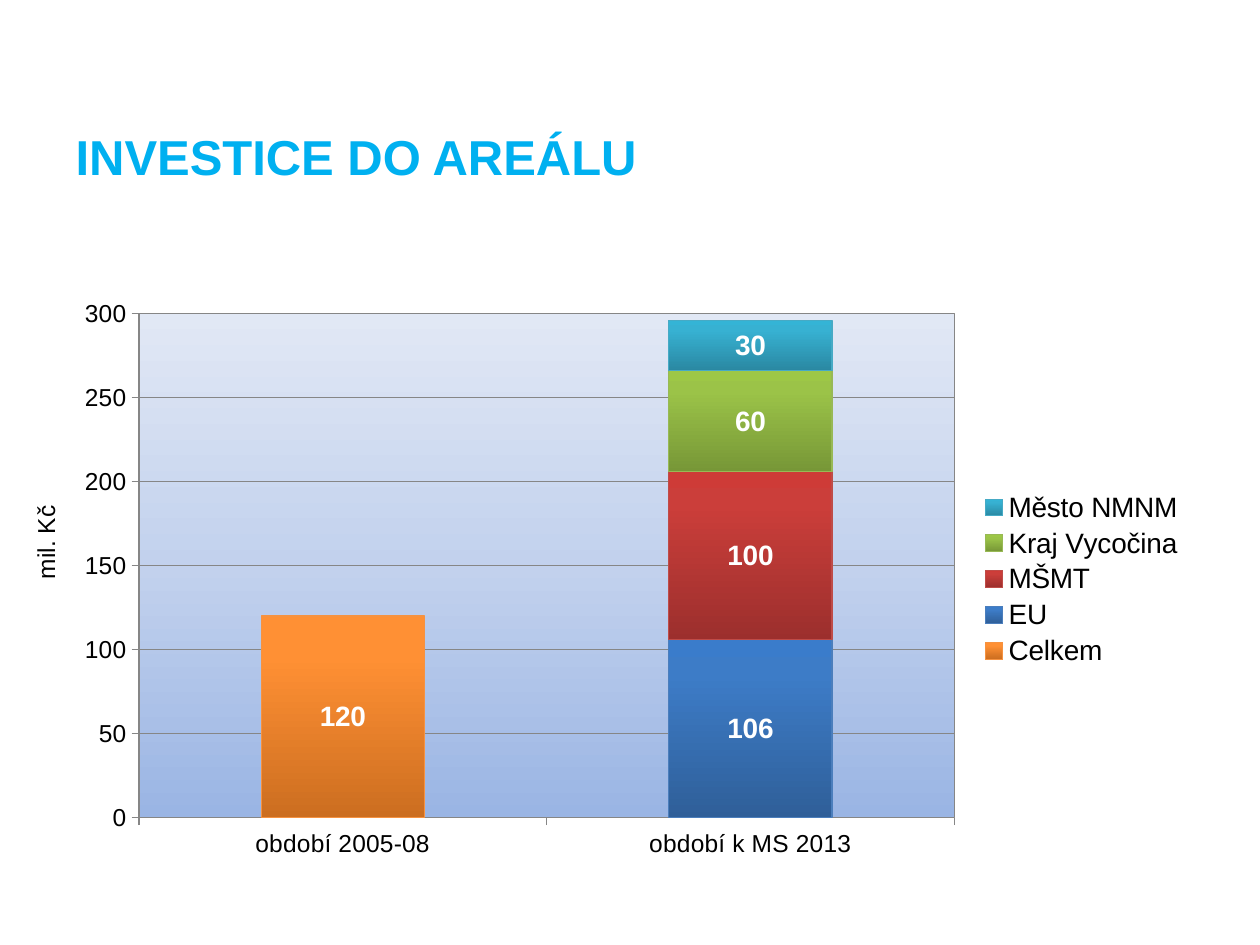
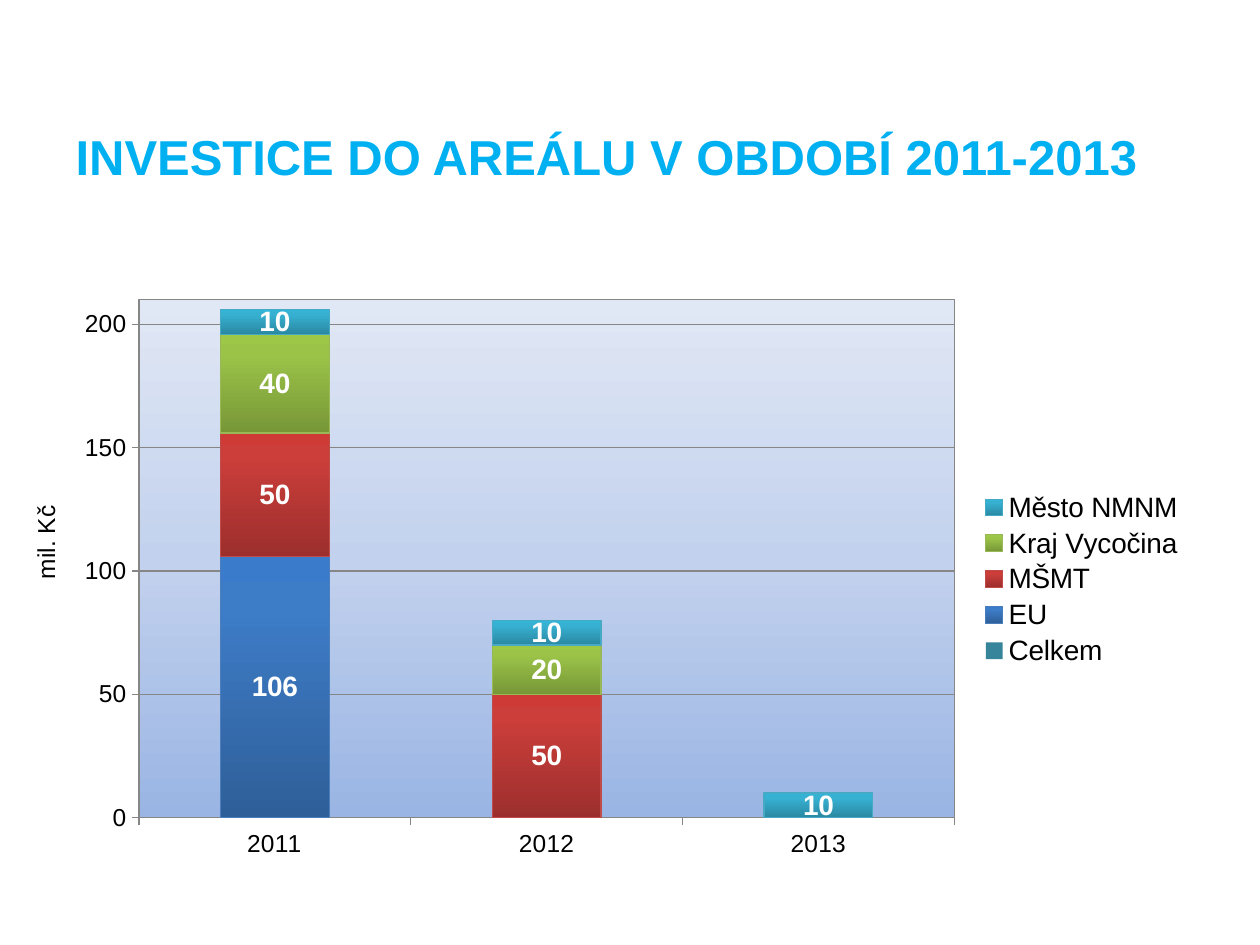
"""Build two slides charting the investments in the sports grounds."""
import dataclasses

import pptx
import pptx.chart.data
import pptx.dml.color
import pptx.enum.chart
import pptx.enum.text
import pptx.oxml
import pptx.oxml.ns
import pptx.util

Cm = pptx.util.Cm
Pt = pptx.util.Pt


@dataclasses.dataclass(frozen=True)
class Theme:
    """Colours, fonts and type sizes shared by the slides."""

    font: str = "Arial"
    chart_font: str = "Calibri"
    heading: str = "00B0F0"
    ink: str = "000000"
    light: str = "FFFFFF"
    rule: str = "868686"
    empty_series: str = "36859A"
    title_size: int = 28
    chart_size: int = 18
    legend_size: int = 16
    axis_size: int = 14
    hairline: float = 0.75
    plot_stops: tuple = ((0, "9AB5E4"), (50, "C2D1ED"), (100, "E1E8F5"))


THEME = Theme()
FUNDERS = {
    "Celkem": ("F69240", ("CC6E20", "FF9034", "FF9136")),
    "EU": ("4B7EBC", ("2F5F99", "3D7CC7", "3A7CCB")),
    "MŠMT": ("BF4C48", ("9C2F2D", "CB3E3A", "CE3B37")),
    "Kraj Vycočina": ("98B955", ("779737", "9BC348", "9DC746")),
    "Město NMNM": ("46AAC5", ("2A88A2", "37B1D2", "34B4D6")),
}
FUNDER_STOPS = (0, 80, 100)


def rgb(code):
    """Return a colour object for a hex code."""
    return pptx.dml.color.RGBColor.from_string(code)


def set_all(target, values):
    """Set attributes of the target from a dict."""
    for name, value in values.items():
        setattr(target, name, value)


def style_font(font, size, color=THEME.ink, bold=False, name=THEME.font):
    """Give a font its face, size, weight and colour."""
    set_all(font, {"name": name, "size": Pt(size), "bold": bold})
    font.color.rgb = rgb(color)


def style_line(line, color):
    """Draw a thin solid line in the colour."""
    line.color.rgb = rgb(color)
    line.width = Pt(THEME.hairline)


def chart_xml(body):
    """Parse a fragment that uses the chart and drawing prefixes."""
    head, rest = body.split(">", 1)
    return pptx.oxml.parse_xml(f"{head} {pptx.oxml.ns.nsdecls('c', 'a')}>{rest}")


def gradient(stops):
    """Return a gradient that runs from the bottom to the top."""
    marks = "".join(
        f'<a:gs pos="{percent * 1000}"><a:srgbClr val="{color}"/></a:gs>'
        for percent, color in stops
    )
    return chart_xml(
        f'<a:gradFill rotWithShape="1"><a:gsLst>{marks}</a:gsLst>'
        '<a:lin ang="16200000" scaled="0"/></a:gradFill>'
    )


def style_plot_area(chart, top, height):
    """Place the plot area by chart fractions and fill it."""
    area = chart._chartSpace.find(".//" + pptx.oxml.ns.qn("c:plotArea"))
    for layout in area.findall(pptx.oxml.ns.qn("c:layout")):
        area.remove(layout)
    places = {"x": 0.067, "y": top, "w": 0.719, "h": height}
    sizes = "".join(f'<c:{key} val="{value}"/>' for key, value in places.items())
    area.insert(0, chart_xml(
        '<c:layout><c:manualLayout><c:layoutTarget val="inner"/>'
        '<c:xMode val="edge"/><c:yMode val="edge"/>'
        f"{sizes}</c:manualLayout></c:layout>"
    ))
    frame = chart_xml(
        f'<c:spPr><a:ln w="{Pt(THEME.hairline)}"><a:solidFill>'
        f'<a:srgbClr val="{THEME.rule}"/></a:solidFill></a:ln></c:spPr>'
    )
    frame.insert(0, gradient(THEME.plot_stops))
    area.append(frame)


def style_axes(chart, maximum):
    """Scale the value axis and format both axes."""
    for axis in (chart.category_axis, chart.value_axis):
        axis.major_tick_mark = pptx.enum.chart.XL_TICK_MARK.OUTSIDE
        style_font(axis.tick_labels.font, THEME.axis_size)
        style_line(axis.format.line, THEME.rule)
    set_all(chart.value_axis, {
        "minimum_scale": 0, "maximum_scale": maximum,
        "major_unit": 50, "has_major_gridlines": True,
    })
    style_line(chart.value_axis.major_gridlines.format.line, THEME.rule)


def style_series(series):
    """Colour a funder's columns and label their values."""
    if not any(series.values):
        series.format.fill.solid()
        series.format.fill.fore_color.rgb = rgb(THEME.empty_series)
        return
    edge, colors = FUNDERS[series.name]
    style_line(series.format.line, edge)
    stops = zip(FUNDER_STOPS, colors)
    series._element.get_or_add_spPr().insert(0, gradient(stops))
    series.data_labels.show_value = True
    style_font(series.data_labels.font, THEME.legend_size, THEME.light, True)


def add_title(slide, text):
    """Write the slide title in its placeholder."""
    title = slide.shapes.title
    set_all(title, {"left": Cm(1.27), "top": Cm(2.13),
                    "width": Cm(22.86), "height": Cm(2.01)})
    title.text_frame.vertical_anchor = pptx.enum.text.MSO_ANCHOR.MIDDLE
    paragraph = title.text_frame.paragraphs[0]
    paragraph.alignment = pptx.enum.text.PP_ALIGN.LEFT
    run = paragraph.add_run()
    run.text = text
    style_font(run.font, THEME.title_size, THEME.heading, True)


def add_investment_chart(slide, periods, amounts, maximum, top, height):
    """Add the stacked columns of amounts by period and funder."""
    investments = pptx.chart.data.CategoryChartData()
    investments.categories = periods
    for funder in FUNDERS:
        investments.add_series(funder, amounts.get(funder, [None] * len(periods)))
    chart = slide.shapes.add_chart(
        pptx.enum.chart.XL_CHART_TYPE.COLUMN_STACKED,
        Cm(1.27), Cm(5.82), Cm(22.86), Cm(11.71), investments,
    ).chart
    set_all(chart, {"has_title": False, "has_legend": True})
    style_font(chart.font, THEME.chart_size, name=THEME.chart_font)
    set_all(chart.legend, {
        "position": pptx.enum.chart.XL_LEGEND_POSITION.RIGHT,
        "include_in_layout": False,
    })
    style_font(chart.legend.font, THEME.legend_size)
    columns = chart.plots[0]
    set_all(columns, {"gap_width": 150, "overlap": 100,
                      "vary_by_categories": False})
    for series in columns.series:
        style_series(series)
    style_axes(chart, maximum)
    style_plot_area(chart, top, height)


def add_unit_label(slide, text):
    """Add the turned unit label beside the value axis."""
    unit = slide.shapes.add_textbox(Cm(-0.08), Cm(10.49), Cm(2.01), Cm(0.86))
    unit.rotation = 270
    unit.text_frame.word_wrap = True
    run = unit.text_frame.paragraphs[0].add_run()
    run.text = text
    style_font(run.font, THEME.axis_size)


def add_investment_slide(deck, title, **chart_values):
    """Add a slide with a title, a chart and its unit."""
    slide = deck.slides.add_slide(deck.slide_layouts.get_by_name("Title Only"))
    add_title(slide, title)
    add_investment_chart(slide, **chart_values)
    add_unit_label(slide, "mil. Kč")


def main():
    """Build and save the presentation."""
    deck = pptx.Presentation()
    set_all(deck, {"slide_width": Cm(25.4), "slide_height": Cm(19.05)})
    add_investment_slide(
        deck, "INVESTICE DO AREÁLU",
        periods=["období 2005-08", "období k MS 2013"],
        amounts={
            "Celkem": [120, None],
            "EU": [None, 106],
            "MŠMT": [None, 100],
            "Kraj Vycočina": [None, 60],
            "Město NMNM": [None, 30],
        },
        maximum=300, top=0.043, height=0.868,
    )
    add_investment_slide(
        deck, "INVESTICE DO AREÁLU V OBDOBÍ 2011-2013",
        periods=["2011", "2012", "2013"],
        amounts={
            "EU": [106, None, None],
            "MŠMT": [50, 50, None],
            "Kraj Vycočina": [40, 20, None],
            "Město NMNM": [10, 10, 10],
        },
        maximum=210, top=0.019, height=0.892,
    )
    deck.save("out.pptx")


if __name__ == "__main__":
    main()
